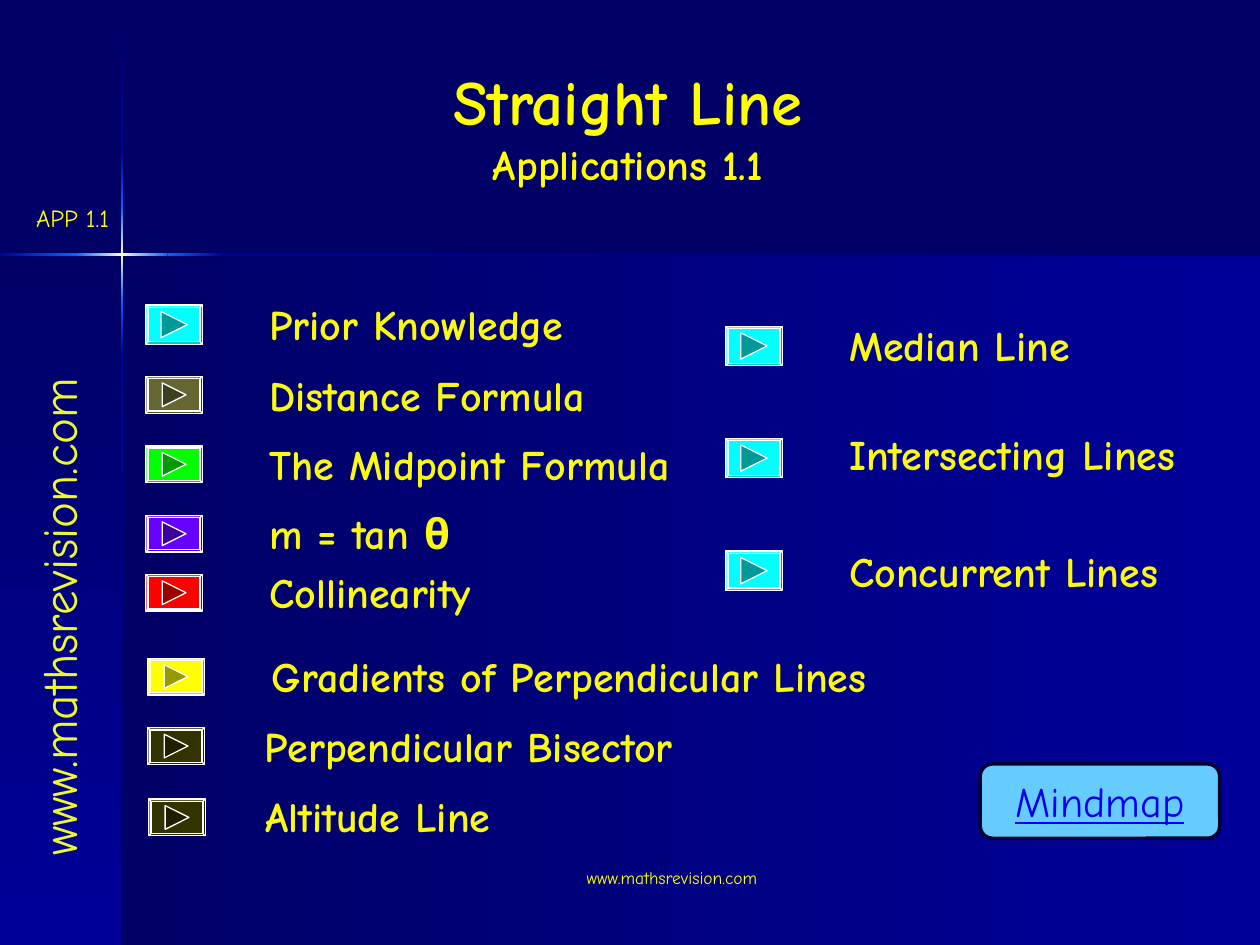
from copy import deepcopy

from pptx import Presentation
from pptx.dml.color import RGBColor
from pptx.enum.shapes import MSO_SHAPE as Shape
from pptx.enum.text import MSO_ANCHOR as Anchor, PP_ALIGN as Align
from pptx.oxml.ns import qn
from pptx.util import Cm, Pt

FONT = "Comic Neue"
NAVY = RGBColor(0x00, 0x00, 0x66)
BLUE = RGBColor(0x00, 0x00, 0x99)
BRIGHT_BLUE = RGBColor(0x00, 0x66, 0xFF)
CREAM = RGBColor(0xFF, 0xFF, 0xCC)
WHITE = RGBColor(0xFF, 0xFF, 0xFF)
YELLOW = RGBColor(0xFF, 0xFF, 0x00)
LABEL_YELLOW = RGBColor(0xF9, 0xF9, 0x11)
SIDE_YELLOW = RGBColor(0xEE, 0xF8, 0x2A)
CYAN = RGBColor(0x00, 0xFF, 0xFF)
OLIVE = RGBColor(0x66, 0x66, 0x33)
GREEN = RGBColor(0x00, 0xFF, 0x00)
PURPLE = RGBColor(0x66, 0x00, 0xFF)
RED = RGBColor(0xFF, 0x00, 0x00)
DARK_OLIVE = RGBColor(0x33, 0x33, 0x00)
SKY = RGBColor(0x66, 0xCC, 0xFF)
DARK_NAVY = RGBColor(0x00, 0x00, 0x33)
LINK_BLUE = RGBColor(0x00, 0x00, 0xEE)

ACROSS, DOWN = 0, 270
BUTTON_WIDTH = 1.14
BUTTON_MARGIN = 0.13

GRADIENT_BARS = [
    (2.46, 5.13, 22.94, 13.92, ACROSS, (NAVY, BLUE)),
    (0, 5.13, 2.46, 13.92, DOWN, (NAVY, BLUE)),
    (2.44, 0.03, 0.05, 3.04, DOWN, (NAVY, BLUE)),
    (2.44, 7.16, 0.05, 11.89, DOWN, (BLUE, NAVY)),
    (4.5, 5.11, 20.9, 0.05, ACROSS, (BLUE, NAVY)),
    (2.44, 6.05, 0.05, 1.11, DOWN, (BRIGHT_BLUE, BLUE)),
    (2.44, 3.07, 0.05, 1.12, DOWN, (BLUE, BRIGHT_BLUE)),
    (2.44, 4.19, 0.05, 1.86, DOWN, (BRIGHT_BLUE, CREAM, BRIGHT_BLUE)),
    (0, 5.11, 1.54, 0.05, ACROSS, (BLUE, BRIGHT_BLUE)),
    (3.38, 5.11, 1.12, 0.05, ACROSS, (BRIGHT_BLUE, BLUE)),
    (1.53, 5.11, 1.85, 0.05, ACROSS, (BRIGHT_BLUE, CREAM, BRIGHT_BLUE)),
]

TOPICS = [
    ("Prior Knowledge", 5.18, 5.89, 7.52, 2.94, 6.15, 0.79, CYAN),
    ("Distance Formula", 5.18, 7.32, 8.1, 2.94, 7.59, 0.74, OLIVE),
    ("The Midpoint Formula", 5.18, 8.71, 9.88, 2.94, 8.99, 0.74, GREEN),
    ("m = tan θ", 5.18, 10.11, 4.98, 2.94, 10.39, 0.74, PURPLE),
    ("Collinearity", 5.18, 11.3, 5.74, 2.94, 11.58, 0.74, RED),
    ("Gradients of Perpendicular Lines", 5.23, 12.98, 14.3, 2.98, 13.27, 0.74, YELLOW),
    ("Perpendicular Bisector", 5.08, 14.4, 17.88, 2.98, 14.67, 0.74, DARK_OLIVE),
    ("Altitude Line", 5.1, 15.82, 17.88, 3, 16.11, 0.74, DARK_OLIVE),
    ("Median Line", 16.87, 6.32, 7.52, 14.63, 6.58, 0.79, CYAN),
    ("Intersecting Lines", 16.87, 8.51, 8.28, 14.63, 8.84, 0.79, CYAN),
    ("Concurrent Lines", 16.87, 10.87, 7.52, 14.63, 11.11, 0.79, CYAN),
]


def format_runs(paragraph, size, color, bold=False):
    for run in paragraph.runs:
        run.font.name = FONT
        run.font.size = Pt(size)
        run.font.bold = bold
        run.font.color.rgb = color


def add_text(slide, text, box, size, color, bold=False, align=Align.LEFT, wrap=True):
    shape = slide.shapes.add_textbox(*map(Cm, box))
    frame = shape.text_frame
    frame.text = text
    frame.word_wrap = wrap
    paragraph = frame.paragraphs[0]
    paragraph.alignment = align
    format_runs(paragraph, size, color, bold)
    return shape


def add_gradient_bar(slide, left, top, width, height, angle, colors):
    shape = slide.shapes.add_shape(
        Shape.RECTANGLE, Cm(left), Cm(top), Cm(width), Cm(height))
    shape.shadow.inherit = False
    shape.line.fill.background()
    shape.fill.gradient()
    shape.fill.gradient_angle = angle
    stop_list = shape._element.spPr.find(".//" + qn("a:gsLst"))
    while len(stop_list) < len(colors):
        stop_list.append(deepcopy(stop_list[0]))
    for index, (stop, color) in enumerate(zip(shape.fill.gradient_stops, colors)):
        stop.color.rgb = color
        stop.position = index / (len(colors) - 1)


def style_shape(shape, fill, line, line_width):
    shape.shadow.inherit = False
    shape.fill.solid()
    shape.fill.fore_color.rgb = fill
    shape.line.color.rgb = line
    shape.line.width = Pt(line_width)


def add_button(slide, left, top, height, color):
    frame = slide.shapes.add_shape(
        Shape.BEVEL, Cm(left), Cm(top), Cm(BUTTON_WIDTH), Cm(height))
    frame.adjustments[0] = 0.06
    style_shape(frame, color, WHITE, 0.75)

    side = height - 2 * BUTTON_MARGIN
    arrow_left = left + (BUTTON_WIDTH - side) / 2
    arrow_top = top + BUTTON_MARGIN
    builder = slide.shapes.build_freeform(Cm(arrow_left), Cm(arrow_top))
    builder.add_line_segments([
        (Cm(arrow_left + side), Cm(arrow_top + side / 2)),
        (Cm(arrow_left), Cm(arrow_top + side)),
    ])
    shade = RGBColor(*(round(channel * 0.6) for channel in color))
    style_shape(builder.convert_to_shape(), shade, WHITE, 0.75)


def add_mindmap_box(slide):
    shape = slide.shapes.add_shape(
        Shape.ROUNDED_RECTANGLE, Cm(19.76), Cm(15.4), Cm(4.83), Cm(1.5))
    style_shape(shape, SKY, DARK_NAVY, 2)
    frame = shape.text_frame
    frame.text = "Mindmap"
    frame.vertical_anchor = Anchor.MIDDLE
    paragraph = frame.paragraphs[0]
    paragraph.alignment = Align.CENTER
    format_runs(paragraph, 24, LINK_BLUE)
    paragraph.runs[0].font.underline = True


def add_title(slide):
    title = add_text(slide, "Straight Line\vApplications 1.1", (5.36, 1.57, 14.6, 1.93),
                     36, YELLOW, True, Align.CENTER)
    title.text_frame.vertical_anchor = Anchor.MIDDLE
    title.text_frame.paragraphs[0].runs[1].font.size = Pt(24)


def main():
    presentation = Presentation()
    presentation.slide_width = Cm(25.4)
    presentation.slide_height = Cm(19.05)
    slide = presentation.slides.add_slide(presentation.slide_layouts[6])
    slide.background.fill.solid()
    slide.background.fill.fore_color.rgb = NAVY

    for bar in GRADIENT_BARS:
        add_gradient_bar(slide, *bar)

    address = "www.mathsrevision.com"
    side_text = add_text(slide, address, (-4.39, 11.2, 11.15, 1.45), 28, SIDE_YELLOW)
    side_text.rotation = 270
    add_text(slide, "APP 1.1", (0.41, 3.96, 2.11, 0.86), 14, YELLOW,
             align=Align.CENTER, wrap=False)
    add_text(slide, address, (9.52, 17.35, 8.05, 1.27), 10, YELLOW, align=Align.CENTER)
    add_title(slide)

    for label, left, top, width, button_left, button_top, height, color in TOPICS:
        add_text(slide, label, (left, top, width, 1.27), 24, LABEL_YELLOW, True)
        add_button(slide, button_left, button_top, height, color)
    add_mindmap_box(slide)

    presentation.save("out.pptx")


if __name__ == "__main__":
    main()
